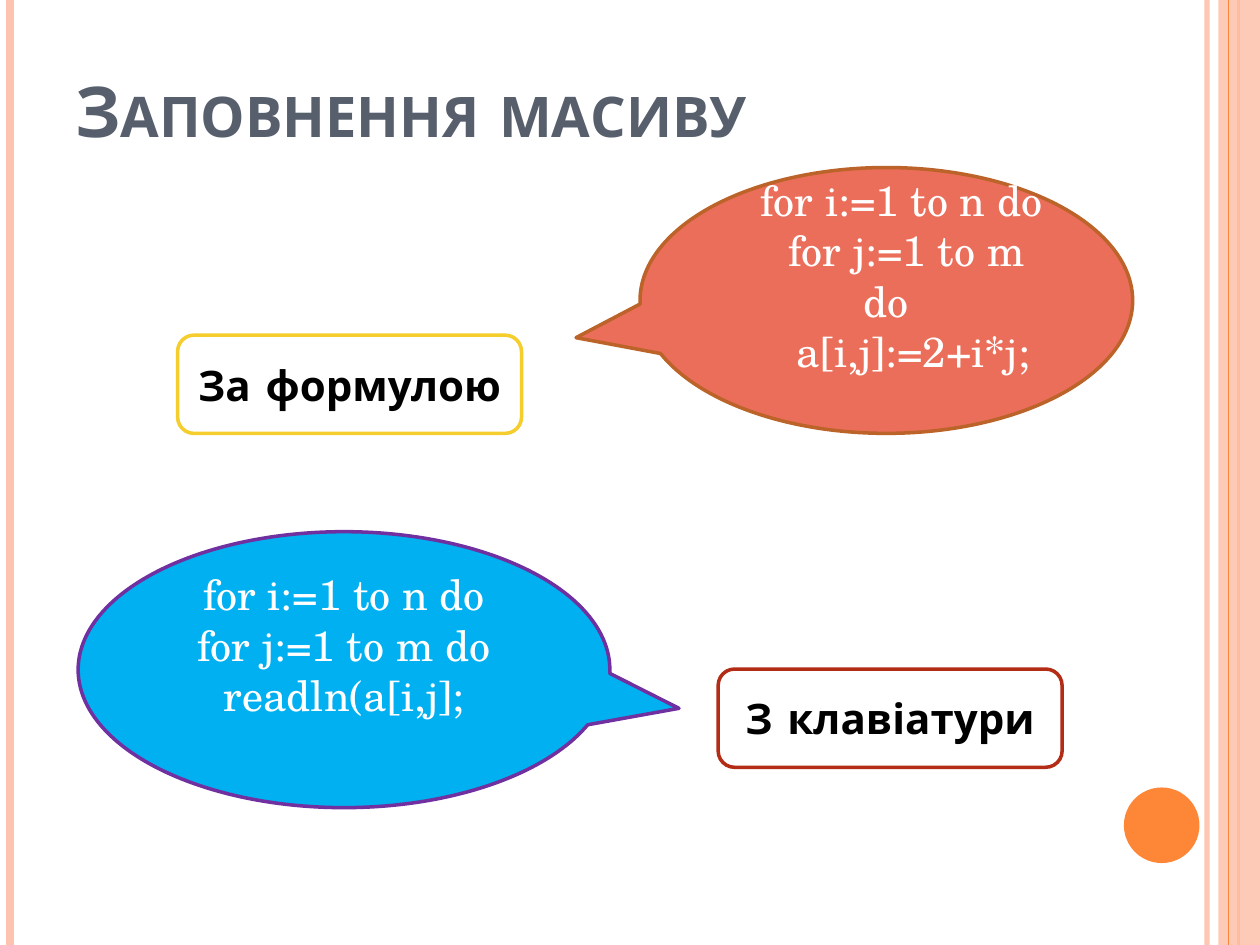
import pptx
import pptx.dml.color
import pptx.enum.shapes
import pptx.enum.text
import pptx.oxml.ns
import pptx.util
from lxml import etree
from pptx.util import Inches

SHAPES = pptx.enum.shapes.MSO_SHAPE
ALIGN = pptx.enum.text.PP_ALIGN
ANCHOR = pptx.enum.text.MSO_ANCHOR

COLORS = {
    "white": "FFFFFF", "black": "000000", "title": "575F6D",
    "peach": "FEC3AE", "orange": "FE8637",
    "yellow": "F5CD2D", "red": "B32C16",
    "coral": "EB6E5A", "brown": "BC6329",
    "blue": "00B0F0", "purple": "7030A0",
}
LABEL_FONT = {"name": "Comic Neue", "size": pptx.util.Pt(24), "bold": True}
TITLE_FONT = {**LABEL_FONT, "size": pptx.util.Pt(40)}
CODE_FONT = {"name": "TeX Gyre Schola", "size": pptx.util.Pt(24)}


def rgb(color):
    return pptx.dml.color.RGBColor.from_string(COLORS[color])


def set_opacity(element, percent):
    """Make the only colour inside a fill or line translucent."""
    color = next(element.iter(pptx.oxml.ns.qn("a:srgbClr")))
    alpha = etree.SubElement(color, pptx.oxml.ns.qn("a:alpha"))
    alpha.set("val", str(percent * 1000))


def add_vertical_line(slide, x, color, width, opacity=100):
    line = slide.shapes.add_connector(
        pptx.enum.shapes.MSO_CONNECTOR.STRAIGHT,
        Inches(x), Inches(0), Inches(x), Inches(7.5))
    line.line.color.rgb = rgb(color)
    line.line.width = pptx.util.Pt(width)
    properties = line._element.spPr
    if opacity < 100:
        set_opacity(properties, opacity)
    etree.SubElement(properties, pptx.oxml.ns.qn("a:effectLst"))


def add_shape(slide, kind, box, fill, outline=None):
    shape = slide.shapes.add_shape(kind, *map(Inches, box))
    shape.shadow.inherit = False
    shape.fill.solid()
    shape.fill.fore_color.rgb = rgb(fill)
    if outline:
        shape.line.color.rgb = rgb(outline)
        shape.line.width = pptx.util.Pt(2)
    else:
        shape.line.fill.background()
    return shape


def write_lines(shape, lines, font, color, align, anchor):
    """Write (text, first-line indent) pairs, one paragraph each."""
    frame = shape.text_frame
    frame.word_wrap = True
    frame.vertical_anchor = anchor
    for number, (text, indent) in enumerate(lines):
        paragraph = frame.add_paragraph() if number else frame.paragraphs[0]
        paragraph.alignment = align
        if indent:
            paragraph._p.get_or_add_pPr().set("indent", str(Inches(indent)))
        run = paragraph.add_run()
        run.text = text
        for name, value in font.items():
            setattr(run.font, name, value)
        run.font.color.rgb = rgb(color)


def add_title(slide, text):
    title = slide.shapes.add_textbox(*map(Inches, (0.5, 0.3, 8.17, 0.95)))
    write_lines(title, [(text, 0)], TITLE_FONT, "title",
                ALIGN.LEFT, ANCHOR.BOTTOM)
    run = title.text_frame.paragraphs[0].runs[0]
    run.font._element.set("cap", "small")


def add_label(slide, left, top, text, outline):
    label = add_shape(slide, SHAPES.ROUNDED_RECTANGLE,
                      (left, top, 2.73, 0.78), "white", outline)
    write_lines(label, [(text, 0)], LABEL_FONT, "black",
                ALIGN.CENTER, ANCHOR.MIDDLE)


def add_code_callout(slide, box, tip, fill, outline, lines):
    callout = add_shape(slide, SHAPES.OVAL_CALLOUT, box, fill, outline)
    callout.adjustments[0], callout.adjustments[1] = tip
    write_lines(callout, lines, CODE_FONT, "white",
                ALIGN.CENTER, ANCHOR.MIDDLE)
    # Lift the code half a line above the middle
    callout.text_frame.margin_bottom = Inches(0.45)


def add_side_decoration(slide):
    add_vertical_line(slide, 9.58, "peach", 3, opacity=93)
    add_vertical_line(slide, 0.08, "peach", 4.5)
    add_vertical_line(slide, 9.83, "orange", 1.5)
    band = add_shape(slide, SHAPES.RECTANGLE, (9.67, 0, 0.33, 7.5), "peach")
    set_opacity(band._element.spPr, 87)
    add_vertical_line(slide, 9.75, "orange", 0.75)
    add_shape(slide, SHAPES.OVAL, (8.92, 6.25, 0.6, 0.6), "orange")


def main():
    presentation = pptx.Presentation()
    presentation.slide_width = Inches(10)
    presentation.slide_height = Inches(7.5)
    slide = presentation.slides.add_slide(presentation.slide_layouts[6])

    add_side_decoration(slide)

    # Filling by a formula
    add_label(slide, 1.41, 2.66, "За формулою", "yellow")
    add_code_callout(
        slide, (5.08, 1.33, 3.91, 2.11), (-0.63, 0.14), "coral", "brown",
        [("for i:=1 to n do", 0.24),
         ("for j:=1 to m do", 0.32),
         ("a[i,j]:=2+i*j;", 0.43)])

    # Filling from the keyboard
    add_label(slide, 5.7, 5.31, "З клавіатури", "red")
    add_code_callout(
        slide, (0.62, 4.22, 4.22, 2.19), (0.63, 0.14), "blue", "purple",
        [("for i:=1 to n do", 0),
         ("for j:=1 to m do", 0),
         ("readln(a[i,j];", 0)])

    add_title(slide, "Заповнення масиву")
    presentation.save("out.pptx")


if __name__ == "__main__":
    main()
